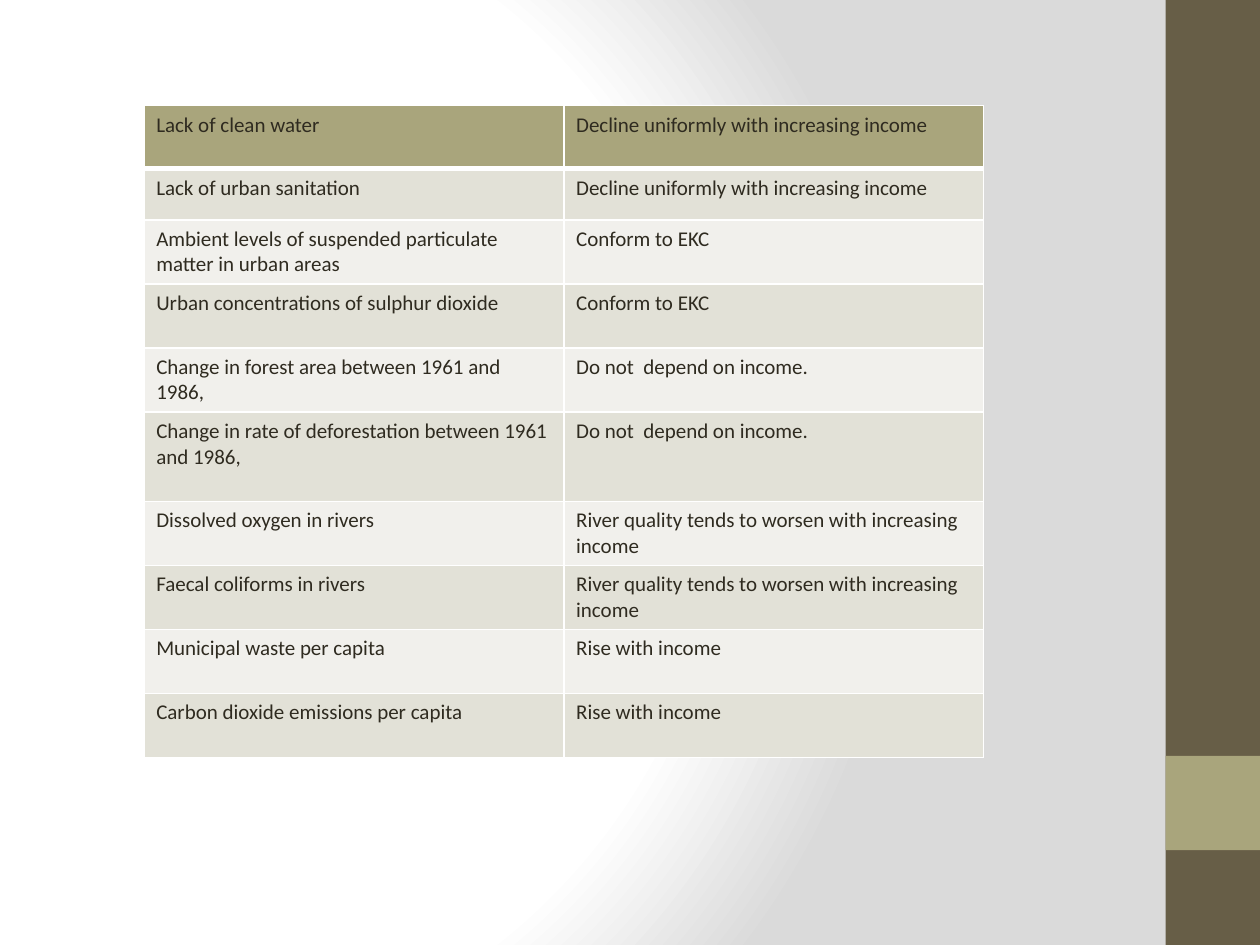
from pptx import Presentation
from pptx.dml.color import RGBColor
from pptx.enum.shapes import MSO_SHAPE
from pptx.oxml import parse_xml
from pptx.oxml.ns import nsdecls
from pptx.util import Cm, Pt

RECT = MSO_SHAPE.RECTANGLE
WHITE = RGBColor(0xFF, 0xFF, 0xFF)
GREY = RGBColor(0xDA, 0xDA, 0xDA)
BROWN = RGBColor(0x67, 0x5E, 0x47)
OLIVE = RGBColor(0xA9, 0xA5, 0x7C)
DARK = RGBColor(0x2F, 0x2B, 0x20)
BANDS = (RGBColor(0xF1, 0xF0, 0xEC), RGBColor(0xE2, 0xE1, 0xD7))

FONT = {"name": "Calibri", "size": Pt(12), "bold": False}
INSETS = {"margin_left": Cm(0.25), "margin_right": Cm(0.25),
          "margin_top": Cm(0.13), "margin_bottom": Cm(0.13)}
STOPS = ((0, WHITE), (75, WHITE), (100, GREY))

DECLINE = "Decline uniformly with increasing income"
CURVE = "Conform to EKC"
NONE = "Do not  depend on income."
WORSE = "River quality tends to worsen with increasing income"
RISE = "Rise with income"

# Indicator, link with income, row height in cm
ROWS = (
    ("Lack of clean water", DECLINE, 1.27),
    ("Lack of urban sanitation", DECLINE, 1.03),
    ("Ambient levels of suspended particulate matter in urban areas",
     CURVE, 1.29),
    ("Urban concentrations of sulphur dioxide", CURVE, 1.29),
    ("Change in forest area between 1961 and 1986,", NONE, 1.29),
    ("Change in rate of deforestation between 1961 and 1986,", NONE, 1.8),
    ("Dissolved oxygen in rivers", WORSE, 1.29),
    ("Faecal coliforms in rivers", WORSE, 1.29),
    ("Municipal waste per capita", RISE, 1.29),
    ("Carbon dioxide emissions per capita", RISE, 1.29),
)


def apply(item, values):
    for name, value in values.items():
        setattr(item, name, value)


def paint_back(slide):
    """Give the slide a circular gradient centred left of the middle."""
    stops = "".join(
        f'<a:gs pos="{pos * 1000}"><a:srgbClr val="{color}"/></a:gs>'
        for pos, color in STOPS)
    slide._element.cSld.insert(0, parse_xml(
        f'<p:bg {nsdecls("p", "a")}><p:bgPr><a:gradFill rotWithShape="1">'
        f'<a:gsLst>{stops}</a:gsLst><a:path path="circle">'
        '<a:fillToRect l="20000" t="50000" r="100000" b="50000"/></a:path>'
        '</a:gradFill><a:effectLst/></p:bgPr></p:bg>'))


def add_block(slide, top, height, color):
    """Add a block of the side bar."""
    block = slide.shapes.add_shape(RECT, Cm(23.5), top, Cm(1.9), height)
    block.shadow.inherit = False
    block.fill.solid()
    block.fill.fore_color.rgb = color
    block.line.fill.background()


def set_edges(cell, widths):
    props = cell._tc.get_or_add_tcPr()
    for place, (side, width) in enumerate(widths.items()):
        props.insert(place, parse_xml(
            f'<a:ln{side} {nsdecls("a")} w="{Pt(width)}"><a:solidFill>'
            f'<a:srgbClr val="{WHITE}"/></a:solidFill></a:ln{side}>'))


def fill_cell(cell, text, color, base):
    cell.text = text
    apply(cell, INSETS)
    font = cell.text_frame.paragraphs[0].runs[0].font
    apply(font, FONT)
    font.color.rgb = DARK
    cell.fill.solid()
    cell.fill.fore_color.rgb = color
    set_edges(cell, {"L": 1, "R": 1, "T": 1, "B": base})


def add_grid(slide):
    total = sum(row[-1] for row in ROWS)
    table = slide.shapes.add_table(len(ROWS), 2, Cm(2.9), Cm(2.13),
                                   Cm(16.93), Cm(total)).table
    for i, (*texts, height) in enumerate(ROWS):
        table.rows[i].height = Cm(height)
        color = BANDS[i % 2] if i else OLIVE
        for j, text in enumerate(texts):
            fill_cell(table.cell(i, j), text, color, 1 if i else 3)


def main():
    deck = Presentation()
    apply(deck, {"slide_width": Cm(25.4), "slide_height": Cm(19.05)})
    slide = deck.slides.add_slide(deck.slide_layouts[6])
    paint_back(slide)
    add_block(slide, Cm(0), deck.slide_height, BROWN)
    add_block(slide, Cm(15.24), Cm(1.9), OLIVE)
    add_grid(slide)
    deck.save("out.pptx")


if __name__ == "__main__":
    main()
